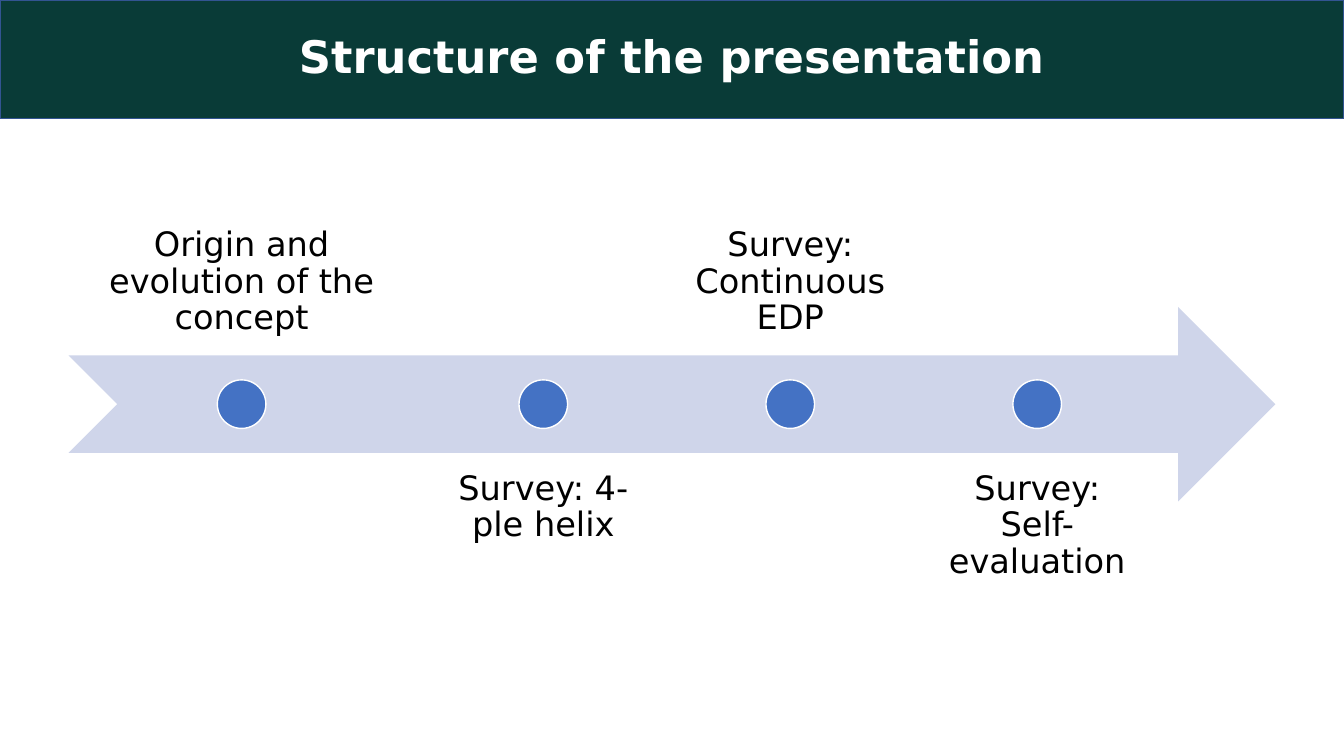
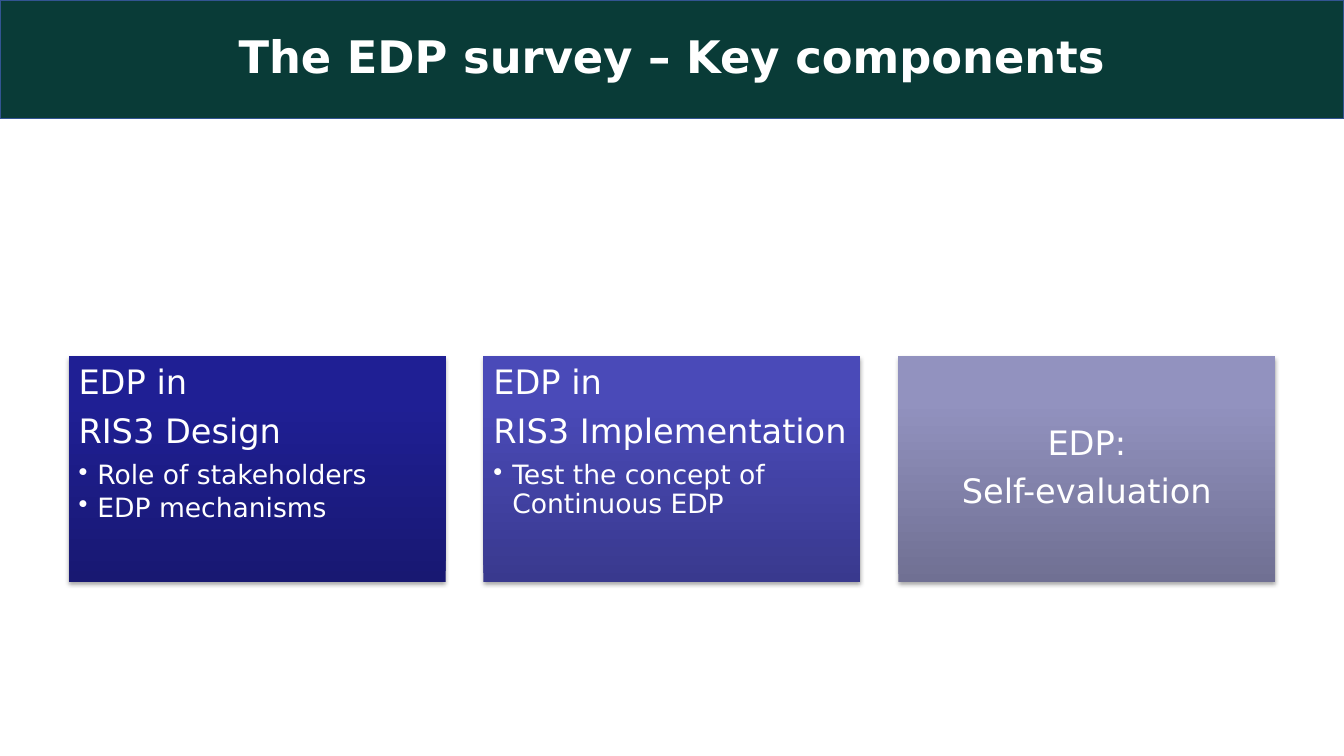
from lxml.etree import SubElement
from pptx import Presentation
from pptx.dml.color import RGBColor
from pptx.enum.shapes import MSO_SHAPE
from pptx.enum.text import MSO_ANCHOR, PP_ALIGN
from pptx.oxml.ns import qn
from pptx.util import Pt

FONT = "DejaVu Sans"
WHITE, BLACK = "FFFFFF", "000000"
BAND_FILL, BAND_LINE = "093B37", "325491"
ARROW_FILL, DOT_FILL = "CFD5EA", "4472C4"
SLIDE_WIDTH, SLIDE_HEIGHT, BAND_HEIGHT = 960, 540, 84.5
LEFT, CONTENT_WIDTH = 49, 862

TIMELINE_TITLE = "Structure of the presentation"
STEPS = [
    ("Origin and evolution of the concept", 246.2),
    ("Survey: 4-ple helix", 168),
    ("Survey: Continuous EDP", 168),
    ("Survey: Self-evaluation", 168),
]
TIMELINE_TOP, ROW_HEIGHT, ROW_PITCH = 115.2, 139, 104
STEP_LEFT, STEP_GAP, DOT_SIZE = 49.5, 8.4, 34.7

CARDS_TITLE = "The EDP survey – Key components"
CARDS = [
    (["EDP in", "RIS3 Design"], ["Role of stakeholders", "EDP mechanisms"],
     ["181872", "1F1F94", "1D1D97"]),
    (["EDP in", "RIS3 Implementation"], ["Test the concept of Continuous EDP"],
     ["39398E", "4A4AB8", "4848BB"]),
    (["EDP:", "Self-evaluation"], [], ["707093", "9292BF", "9191C0"]),
]
GRADIENT_STOPS = [0, 80, 100]
CARD_TOP, CARD_HEIGHT, CARD_GAP = 254.2, 161.4, 27


def color(value):
    return RGBColor.from_string(value)


def add_box(slide, kind, left, top, width, height, fill=None, line=None):
    shape = slide.shapes.add_shape(kind, Pt(left), Pt(top), Pt(width), Pt(height))
    shape.shadow.inherit = False
    if fill:
        shape.fill.solid()
        shape.fill.fore_color.rgb = color(fill)
    if line:
        shape.line.color.rgb = color(line)
        shape.line.width = Pt(1)
    else:
        shape.line.fill.background()
    return shape


def set_frame(shape, anchor, inset):
    frame = shape.text_frame
    frame.word_wrap = True
    frame.vertical_anchor = anchor
    frame.margin_left = frame.margin_right = Pt(inset)
    frame.margin_top = frame.margin_bottom = Pt(inset)
    return frame


def write(paragraph, text, size, font_color, align, bold=False, after=0, bullet=False):
    if bullet:
        properties = paragraph._p.get_or_add_pPr()
        properties.set("marL", str(Pt(13.5)))
        properties.set("indent", str(-Pt(13.5)))
        SubElement(properties, qn("a:buChar"), char="•")
    paragraph.alignment = align
    paragraph.line_spacing = 0.9
    paragraph.space_after = Pt(after)
    run = paragraph.add_run()
    run.text = text
    run.font.name = FONT
    run.font.size = Pt(size)
    run.font.bold = bold
    run.font.color.rgb = color(font_color)


def add_titled_slide(presentation, title):
    slide = presentation.slides.add_slide(presentation.slide_layouts[6])
    band = add_box(slide, MSO_SHAPE.RECTANGLE, 0, 0, SLIDE_WIDTH, BAND_HEIGHT,
                   BAND_FILL, BAND_LINE)
    frame = set_frame(band, MSO_ANCHOR.MIDDLE, 3.6)
    write(frame.paragraphs[0], title, 32, WHITE, PP_ALIGN.CENTER, bold=True)
    return slide


def build_timeline(presentation):
    slide = add_titled_slide(presentation, TIMELINE_TITLE)
    arrow_top = TIMELINE_TOP + ROW_PITCH
    add_box(slide, MSO_SHAPE.NOTCHED_RIGHT_ARROW, LEFT, arrow_top,
            CONTENT_WIDTH, ROW_HEIGHT, ARROW_FILL)
    dot_top = arrow_top + (ROW_HEIGHT - DOT_SIZE) / 2
    left = STEP_LEFT
    for index, (text, width) in enumerate(STEPS):
        below = index % 2 == 1
        top = TIMELINE_TOP + 2 * ROW_PITCH if below else TIMELINE_TOP
        label = slide.shapes.add_textbox(Pt(left), Pt(top), Pt(width), Pt(ROW_HEIGHT))
        frame = set_frame(label, MSO_ANCHOR.TOP if below else MSO_ANCHOR.BOTTOM, 13.7)
        write(frame.paragraphs[0], text, 24, BLACK, PP_ALIGN.CENTER)
        add_box(slide, MSO_SHAPE.OVAL, left + (width - DOT_SIZE) / 2, dot_top,
                DOT_SIZE, DOT_SIZE, DOT_FILL, WHITE)
        left += width + STEP_GAP


def set_gradient(shape, colors):
    shape.fill.gradient()
    shape.fill.gradient_angle = 90
    stops = shape.element.spPr.find(".//" + qn("a:gsLst"))
    stops.clear()
    for position, value in zip(GRADIENT_STOPS, colors):
        stop = SubElement(stops, qn("a:gs"), pos=str(position * 1000))
        SubElement(stop, qn("a:srgbClr"), val=value)


def set_shadow(shape):
    effects = shape.element.spPr.find(qn("a:effectLst"))
    shadow = SubElement(effects, qn("a:outerShdw"), blurRad=str(Pt(3.1)),
                        dist=str(Pt(1.8)), dir="5400000", rotWithShape="0")
    shade = SubElement(shadow, qn("a:srgbClr"), val=BLACK)
    SubElement(shade, qn("a:alpha"), val="35000")


def build_cards(presentation):
    slide = add_titled_slide(presentation, CARDS_TITLE)
    width = (CONTENT_WIDTH - CARD_GAP * (len(CARDS) - 1)) / len(CARDS)
    for index, (headings, bullets, colors) in enumerate(CARDS):
        card = add_box(slide, MSO_SHAPE.RECTANGLE, LEFT + index * (width + CARD_GAP),
                       CARD_TOP, width, CARD_HEIGHT)
        set_gradient(card, colors)
        set_shadow(card)
        frame = set_frame(card, MSO_ANCHOR.TOP if bullets else MSO_ANCHOR.MIDDLE, 7.2)
        align = PP_ALIGN.LEFT if bullets else PP_ALIGN.CENTER
        lines = [(text, 24, 8.4, False) for text in headings]
        lines += [(text, 19, 2.85, True) for text in bullets]
        for number, (text, size, after, bullet) in enumerate(lines):
            paragraph = frame.add_paragraph() if number else frame.paragraphs[0]
            write(paragraph, text, size, WHITE, align, after=after, bullet=bullet)


def main():
    presentation = Presentation()
    presentation.slide_width = Pt(SLIDE_WIDTH)
    presentation.slide_height = Pt(SLIDE_HEIGHT)
    build_timeline(presentation)
    build_cards(presentation)
    presentation.save("out.pptx")


if __name__ == "__main__":
    main()
